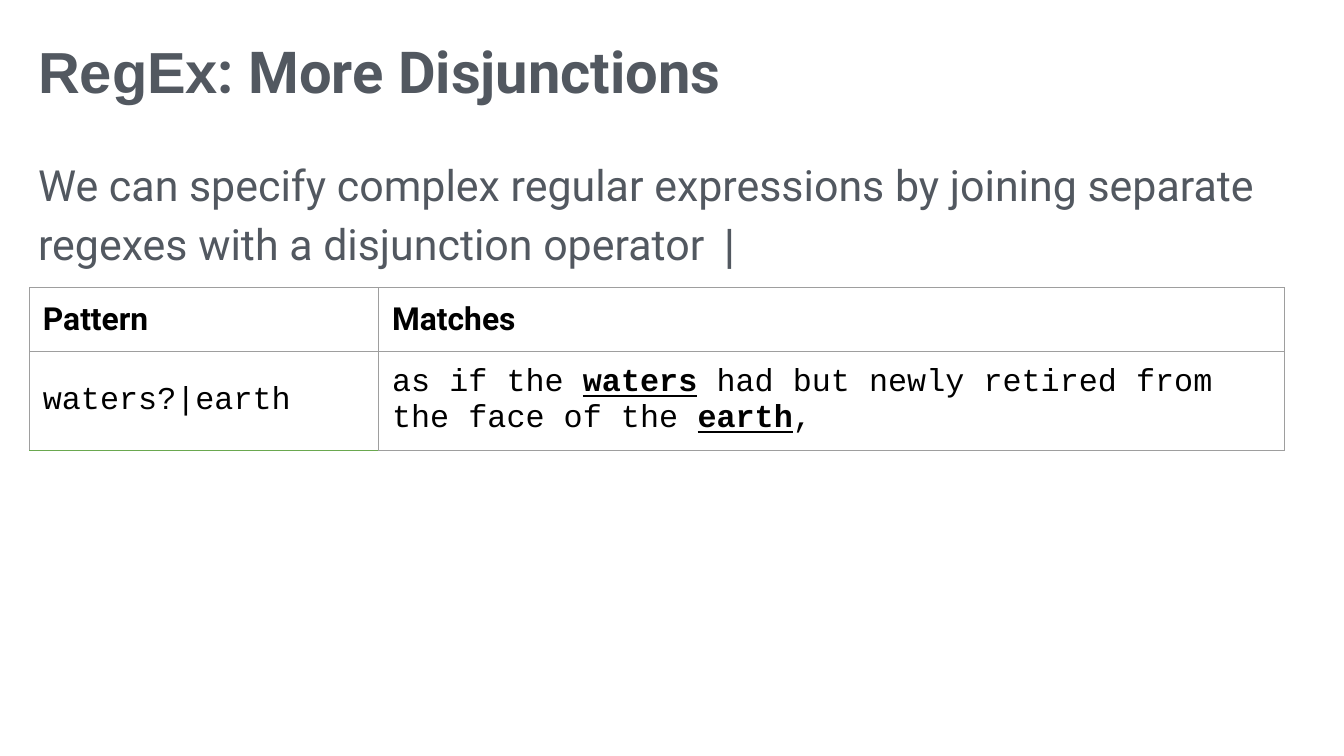
from lxml import etree
from pptx import Presentation
from pptx.dml.color import RGBColor
from pptx.enum.text import MSO_ANCHOR, MSO_AUTO_SIZE, PP_ALIGN
from pptx.oxml.ns import qn
from pptx.util import Cm, Pt

TOP, MID = MSO_ANCHOR.TOP, MSO_ANCHOR.MIDDLE
LEFT = PP_ALIGN.LEFT
FIXED = MSO_AUTO_SIZE.NONE
SLATE = RGBColor(0x52, 0x58, 0x60)
BLACK = RGBColor(0x00, 0x00, 0x00)
GRAY = RGBColor(0x9E, 0x9E, 0x9E)
GREEN = RGBColor(0x6A, 0xA8, 0x4F)
SANS, ARIAL, MONO = "Roboto", "Arial", "Courier New"


class Deck:
    inset = Cm(0.16)
    pad = Cm(0.25)

    def __init__(self, wide, high):
        self.prs = Presentation()
        self.prs.slide_width, self.prs.slide_height = Cm(wide), Cm(high)
        self.slide = self.prs.slides.add_slide(self.prs.slide_layouts[1])

    def run(self, para, text, face, size, color, bold=False, italic=False, under=False):
        run = para.add_run()
        run.text = text
        font = run.font
        font.name, font.size, font.color.rgb = face, Pt(size), color
        font.bold, font.italic, font.underline = bold, italic, under

    def holder(self, shape, box):
        shape.left, shape.top, shape.width, shape.height = map(Cm, box)
        frame = shape.text_frame
        frame.word_wrap, frame.auto_size = True, FIXED
        frame.vertical_anchor = TOP
        frame.margin_left = frame.margin_right = self.inset
        frame.margin_top = frame.margin_bottom = self.inset
        para = frame.paragraphs[0]
        para.alignment = LEFT
        para.space_before = Pt(0)
        return para

    def title(self, box, parts):
        para = self.holder(self.slide.shapes.title, box)
        for text, face in parts:
            self.run(para, text, face, 31, SLATE, bold=True)

    def body(self, box, parts):
        para = self.holder(self.slide.placeholders[1], box)
        para.line_spacing = 1.15
        para.space_after = Pt(10)
        props = para._p.get_or_add_pPr()
        props.set("marL", "0")
        props.set("indent", "0")
        etree.SubElement(props, qn("a:buNone"))
        for text, face, italic in parts:
            self.run(para, text, face, 23, SLATE, italic=italic)

    def edge(self, cell, side, color):
        props = cell._tc.get_or_add_tcPr()
        line = etree.SubElement(props, qn(f"a:ln{side}"), w=str(Pt(0.75)))
        fill = etree.SubElement(line, qn("a:solidFill"))
        etree.SubElement(fill, qn("a:srgbClr"), val=str(color))

    def cell(self, cell, parts, face, anchor, base):
        cell.margin_left = cell.margin_right = self.pad
        cell.margin_top = cell.margin_bottom = self.pad
        cell.vertical_anchor = anchor
        for side in "LRT":
            self.edge(cell, side, GRAY)
        self.edge(cell, "B", base)
        cell.fill.background()
        for text, bold, under in parts:
            self.run(cell.text_frame.paragraphs[0], text, face, 17, BLACK,
                     bold=bold, under=under)

    def table(self, left, top, cols, rows, data):
        grid = self.slide.shapes.add_table(
            len(rows), len(cols), Cm(left), Cm(top), Cm(sum(cols)), Cm(sum(rows))).table
        grid.first_row = grid.horz_banding = False
        for col, wide in zip(grid.columns, cols):
            col.width = Cm(wide)
        for row, high, (face, anchor, cells) in zip(grid.rows, rows, data):
            row.height = Cm(high)
            for cell, (parts, base) in zip(row.cells, cells):
                self.cell(cell, parts, face, anchor, base)


def main():
    deck = Deck(25.4, 14.29)
    deck.body((0.56, 2.69, 23.75, 9.98), [
        ("We can specify complex regular expressions by joining separate "
         "regexes with a disjunction operator ", SANS, False),
        ("|", MONO, True),
    ])
    deck.title((0.56, 0.51, 24.2, 1.25), [
        ("RegEx", ARIAL), (": More Disjunctions", SANS)])
    deck.table(0.56, 5.44, (6.6, 17.12), (1.07, 1.75), [
        (SANS, TOP, [
            ([("Pattern", True, False)], GRAY),
            ([("Matches", True, False)], GRAY),
        ]),
        (MONO, MID, [
            ([("waters?|earth", False, False)], GREEN),
            ([
                ("as if the ", False, False),
                ("waters", True, True),
                (" had but newly retired from the face of the ", False, False),
                ("earth", True, True),
                (",", False, False),
            ], GRAY),
        ]),
    ])
    deck.prs.save("out.pptx")


if __name__ == "__main__":
    main()
